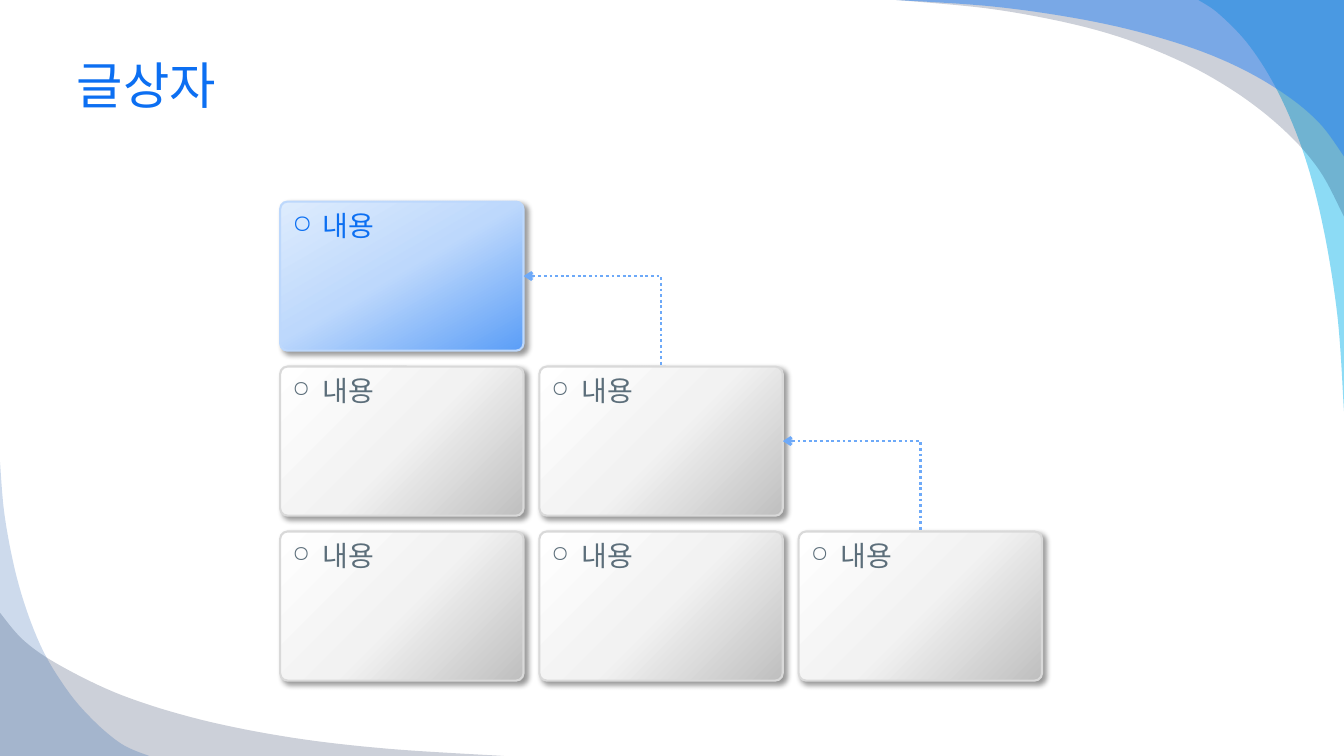
from lxml.etree import SubElement as Sub
from pptx import Presentation
from pptx.dml.color import RGBColor
from pptx.enum.dml import MSO_LINE as Dash
from pptx.enum.shapes import MSO_CONNECTOR as Link, MSO_SHAPE as Kind
from pptx.enum.text import MSO_ANCHOR as Anchor, PP_ALIGN as Align
from pptx.oxml.ns import qn
from pptx.util import Cm, Pt

WIDE, HIGH = 33.87, 19.05
FONT = "Karla"
BLUE, GREY = "0C6FF2", "5C6E7A"

# Curves as distances (cm) from the slide corner: points, colour, opacity %
TOP = [
    ([(3.67, 0), (3.14, 0.36), (2.37, 1.17), (1.64, 2.36), (1, 3.91),
      (0.52, 5.74), (0.16, 8), (0, 10.36)], "00B1E9", 45),
    ([(11.29, 0), (8.72, 0.25), (6.23, 0.76), (4.28, 1.47), (2.75, 2.31),
      (1.51, 3.28), (0.62, 4.29), (0, 5.46)], "021741", 20),
    ([(11.29, 0), (8.7, 0.18), (6.23, 0.56), (4.25, 1.07), (2.75, 1.65),
      (1.51, 2.36), (0.62, 3.1), (0, 3.94)], "247FF4", 49),
]
LOW = [
    ([(0, 3.61), (0.61, 2.9), (1.55, 2.26), (3.1, 1.52), (5.08, 0.91),
      (7.37, 0.46), (9.8, 0.18), (12.7, 0)], "021741", 20),
    ([(0, 7.42), (0.13, 5.97), (0.48, 4.29), (1.02, 2.79), (1.68, 1.68),
      (2.34, 0.91), (3.07, 0.3), (3.76, 0)], "084AA1", 20),
]

# Card styles: gradient stops, angle, edge, text colour, bullet size %
HOT = ([(0, "DEECFD"), (48, "BDD8FC"), (100, "5B9EF7")], 60, "BDD8FC", BLUE, 90)
PLAIN = ([(0, "FFFFFF"), (51, "F2F2F2"), (100, "BFBFBF")], 45, "D9D9D9", GREY, 80)


def paint(color, value):
    color.rgb = RGBColor.from_string(value)


def add(node, tag, **attrs):
    return Sub(node, qn(tag), {key: str(val) for key, val in attrs.items()})


def style(para, size, color):
    for run in para.runs:
        run.font.name = FONT
        run.font.size = Pt(size)
        paint(run.font.color, color)


def smooth(points, steps=8):
    """Catmull-Rom curve through the points."""
    ends = [points[0], *points, points[-1]]
    curve = []
    for a, b, c, d in zip(ends, ends[1:], ends[2:], ends[3:]):
        for step in range(steps):
            t = step / steps
            curve.append(tuple(
                q + t * (r - p) / 2 + t * t * (2 * p - 5 * q + 4 * r - s) / 2
                + t ** 3 * (3 * q - p - 3 * r + s) / 2
                for p, q, r, s in zip(a, b, c, d)))
    return curve + [points[-1]]


# Corner swooshes
def swoosh(slide, left, top, way, curves):
    for points, color, alpha in curves:
        spots = [(Cm(left + way * x), Cm(top - way * y))
                 for x, y in [(0, 0), *smooth(points)]]
        form = slide.shapes.build_freeform(*spots[0])
        form.add_line_segments(spots[1:], close=True)
        shape = form.convert_to_shape()
        shape.shadow.inherit = False
        shape.line.fill.background()
        shape.fill.solid()
        paint(shape.fill.fore_color, color)
        tint = shape._element.spPr.find(".//" + qn("a:srgbClr"))
        add(tint, "a:alpha", val=alpha * 1000)


# Title
def head(slide, left, top, width, height):
    title = slide.shapes.title
    title.left, title.top = Cm(left), Cm(top)
    title.width, title.height = Cm(width), Cm(height)
    frame = title.text_frame
    frame.text = "글상자"
    frame.vertical_anchor = Anchor.MIDDLE
    frame.paragraphs[0].alignment = Align.LEFT
    style(frame.paragraphs[0], 36, BLUE)


# One card with a bulleted line
def card(slide, left, top, width, height, look):
    stops, angle, edge, ink, size = look
    box = slide.shapes.add_shape(Kind.ROUNDED_RECTANGLE, Cm(left), Cm(top),
                                 Cm(width), Cm(height))
    box.adjustments[0] = 0.05
    props = box._element.spPr
    grad = add(props, "a:gradFill", rotWithShape=1)
    row = add(grad, "a:gsLst")
    for spot, color in stops:
        add(add(row, "a:gs", pos=spot * 1000), "a:srgbClr", val=color)
    add(grad, "a:lin", ang=angle * 60000, scaled=0)
    box.line.width = Pt(1.5)
    paint(box.line.color, edge)

    # Soft shadow
    box.shadow.inherit = False
    shade = add(props.find(qn("a:effectLst")), "a:outerShdw", blurRad=Pt(4),
                dist=Pt(3), dir=45 * 60000, algn="tl", rotWithShape=0)
    add(add(shade, "a:srgbClr", val="000000"), "a:alpha", val=40000)

    # Text
    frame = box.text_frame
    frame.word_wrap = True
    frame.vertical_anchor = Anchor.TOP
    frame.text = "내용"
    para = frame.paragraphs[0]
    para.alignment = Align.LEFT
    style(para, 20, ink)
    rule = para._p.get_or_add_pPr()
    rule.set("marL", str(Cm(0.76)))
    rule.set("indent", str(-Cm(0.76)))
    add(add(rule, "a:buClr"), "a:srgbClr", val=ink)
    add(rule, "a:buSzPct", val=size * 1000)
    add(rule, "a:buChar", char="○")
    return box


# Dotted arrow from the top of one card to the side of another
def arrow(slide, goal, start):
    link = slide.shapes.add_connector(Link.ELBOW, 0, 0, 0, 0)
    link.begin_connect(goal, 3)
    link.end_connect(start, 0)
    link.line.width = Pt(2)
    link.line.dash_style = Dash.ROUND_DOT
    paint(link.line.color, "6DA9F8")
    props = link._element.spPr
    props.find(qn("a:prstGeom")).set("prst", "bentConnector2")
    add(props.find(qn("a:ln")), "a:headEnd", type="arrow")
    add(props, "a:effectLst")


# Staircase of cards
def stairs(slide, left, top, width, height, count=3, gap=0.4):
    wide = (width - (count - 1) * gap) / count
    high = (height - (count - 1) * gap) / count
    cards = {}
    for row in range(count):
        for col in range(row + 1):
            cards[row, col] = card(
                slide, left + col * (wide + gap), top + row * (high + gap),
                wide, high, PLAIN if row else HOT)
    for step in range(count - 1):
        arrow(slide, cards[step, step], cards[step + 1, step + 1])


def main():
    deck = Presentation()
    deck.slide_width, deck.slide_height = Cm(WIDE), Cm(HIGH)
    slide = deck.slides.add_slide(deck.slide_layouts[5])
    swoosh(slide, WIDE, 0, -1, TOP)
    swoosh(slide, 0, HIGH, 1, LOW)
    head(slide, 1.68, 0.84, 30.48, 2.57)
    stairs(slide, 7.06, 5.08, 19.2, 12.07)
    deck.save("out.pptx")


if __name__ == "__main__":
    main()
